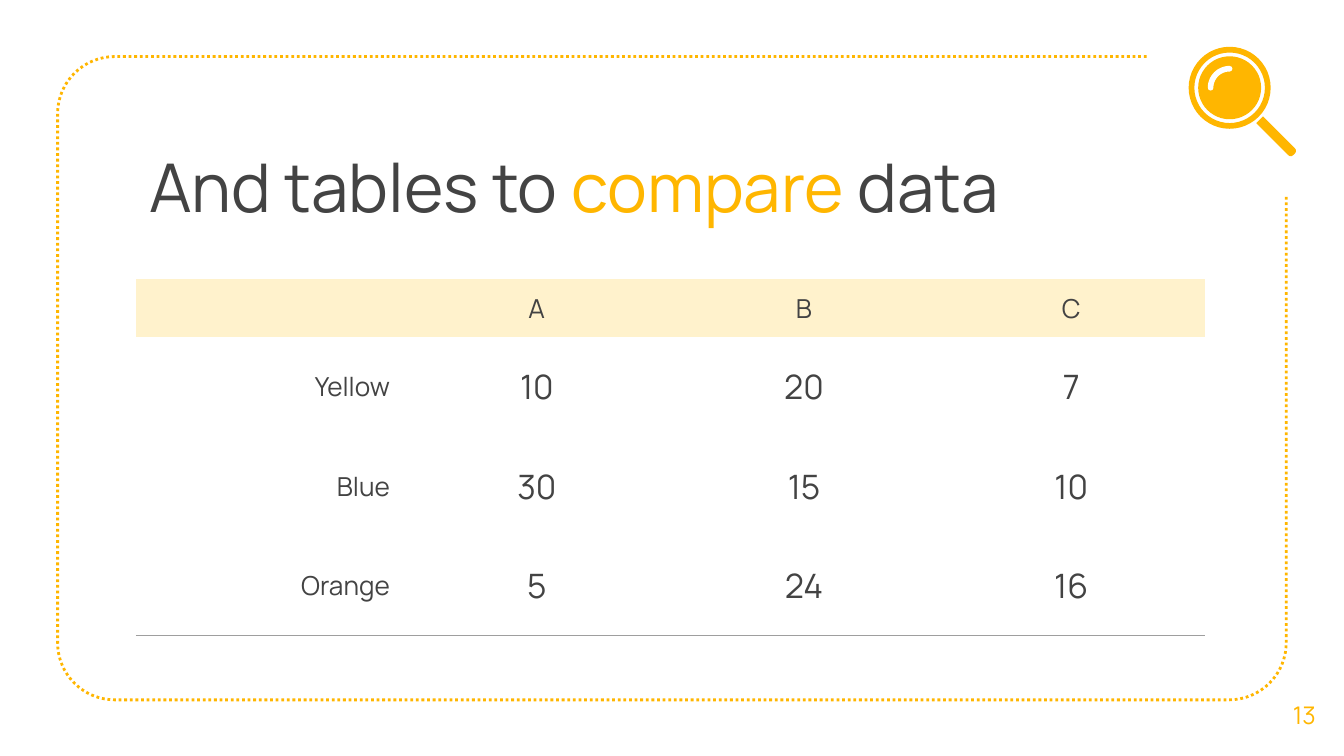
"""Build a slide with a comparison table inside a dotted frame."""
import math

import pptx
import pptx.dml.color
import pptx.enum.dml
import pptx.enum.shapes
import pptx.enum.text
import pptx.oxml
import pptx.oxml.ns
import pptx.util

Cm = pptx.util.Cm
Pt = pptx.util.Pt
RGBColor = pptx.dml.color.RGBColor
Align = pptx.enum.text.PP_ALIGN
Anchor = pptx.enum.text.MSO_ANCHOR
Preset = pptx.enum.shapes.MSO_SHAPE

FONT = "Manrope"
AMBER = RGBColor(0xFF, 0xB6, 0x00)
CREAM = RGBColor(0xFF, 0xF2, 0xCC)
CHARCOAL = RGBColor(0x43, 0x43, 0x43)
GRAY = RGBColor(0x9E, 0x9E, 0x9E)
WHITE = RGBColor(0xFF, 0xFF, 0xFF)

TITLE = [("And tables to ", CHARCOAL), ("compare", AMBER), (" data", CHARCOAL)]
PAGE_NUMBER = "13"
TABLE = [
    ("", "A", "B", "C"),
    ("Yellow", "10", "20", "7"),
    ("Blue", "30", "15", "10"),
    ("Orange", "5", "24", "16"),
]
ROW_RULES = [None, AMBER, AMBER, GRAY]

TABLE_LEFT, TABLE_TOP = 2.57, 5.28
COLUMN_WIDTH, HEADER_HEIGHT, ROW_HEIGHT = 5.05, 1.09, 1.88
FRAME_LEFT, FRAME_TOP, FRAME_RIGHT, FRAME_BOTTOM = 1.09, 1.07, 24.31, 13.23
FRAME_RADIUS = 1.08
FRAME_START_X, FRAME_END_Y = 21.67, 3.71
LENS_X, LENS_Y = 23.24, 1.66


def write(frame, runs, size=14, align=Align.LEFT, anchor=Anchor.MIDDLE):
    frame.word_wrap = True
    frame.auto_size = pptx.enum.text.MSO_AUTO_SIZE.NONE
    frame.vertical_anchor = anchor
    frame.margin_left = frame.margin_right = Cm(0.25)
    frame.margin_top = frame.margin_bottom = Cm(0.25)
    paragraph = frame.paragraphs[0]
    paragraph.alignment = align
    for text, color in runs:
        run = paragraph.add_run()
        run.text = text
        run.font.name = FONT
        run.font.size = Pt(size)
        run.font.color.rgb = color


def arc(x, y, radius, start, end, steps=16):
    angles = [math.radians(start + (end - start) * i / steps) for i in range(steps + 1)]
    return [(x + radius * math.cos(a), y + radius * math.sin(a)) for a in angles]


def draw_line(slide, points, color, width):
    points = [(Cm(x), Cm(y)) for x, y in points]
    builder = slide.shapes.build_freeform(*points[0])
    builder.add_line_segments(points[1:], close=False)
    outline = builder.convert_to_shape()
    outline.shadow.inherit = False
    outline.fill.background()
    outline.line.color.rgb = color
    outline.line.width = Pt(width)
    return outline


def add_frame(slide):
    left, right = FRAME_LEFT + FRAME_RADIUS, FRAME_RIGHT - FRAME_RADIUS
    top, bottom = FRAME_TOP + FRAME_RADIUS, FRAME_BOTTOM - FRAME_RADIUS
    points = [
        (FRAME_START_X, FRAME_TOP),
        *arc(left, top, FRAME_RADIUS, 270, 180),
        *arc(left, bottom, FRAME_RADIUS, 180, 90),
        *arc(right, bottom, FRAME_RADIUS, 90, 0),
        (FRAME_RIGHT, FRAME_END_Y),
    ]
    border = draw_line(slide, points, AMBER, 1.5)
    border.line.dash_style = pptx.enum.dml.MSO_LINE.ROUND_DOT


def add_amber(slide, preset, x, y, width, height):
    part = slide.shapes.add_shape(
        preset, Cm(x - width / 2), Cm(y - height / 2), Cm(width), Cm(height))
    part.shadow.inherit = False
    part.fill.solid()
    part.fill.fore_color.rgb = AMBER
    part.line.fill.background()
    return part


def add_magnifier(slide):
    rim = add_amber(slide, Preset.DONUT, LENS_X, LENS_Y, 1.55, 1.55)
    rim.adjustments[0] = 0.07
    add_amber(slide, Preset.OVAL, LENS_X, LENS_Y, 1.19, 1.19)
    glint = draw_line(slide, arc(LENS_X, LENS_Y, 0.36, 180, 270), WHITE, 3)
    glint.line._get_or_add_ln().set("cap", "rnd")
    handle = add_amber(slide, Preset.ROUND_2_SAME_RECTANGLE, 24.13, 2.59, 0.18, 0.92)
    handle.adjustments[0] = 0.35
    handle.rotation = 135


def set_borders(cell, bottom):
    properties = cell._tc.get_or_add_tcPr()
    for index, side in enumerate(("lnL", "lnR", "lnT", "lnB")):
        color = bottom if side == "lnB" else None
        fill = (f'<a:solidFill><a:srgbClr val="{color}"/></a:solidFill>'
                if color else "<a:noFill/>")
        properties.insert(index, pptx.oxml.parse_xml(
            f'<a:{side} {pptx.oxml.ns.nsdecls("a")} w="{Pt(0.75)}">{fill}</a:{side}>'))


def add_comparison(slide):
    heights = [HEADER_HEIGHT] + [ROW_HEIGHT] * (len(TABLE) - 1)
    columns = len(TABLE[0])
    comparison = slide.shapes.add_table(
        len(TABLE), columns, Cm(TABLE_LEFT), Cm(TABLE_TOP),
        Cm(COLUMN_WIDTH * columns), Cm(sum(heights))).table
    comparison.first_row = comparison.horz_banding = False
    for r, (values, height, rule) in enumerate(zip(TABLE, heights, ROW_RULES)):
        comparison.rows[r].height = Cm(height)
        for c, value in enumerate(values):
            cell = comparison.cell(r, c)
            write(cell.text_frame, [(value, CHARCOAL)], size=18 if r and c else 14,
                  align=Align.CENTER if c else Align.RIGHT)
            cell.vertical_anchor = Anchor.MIDDLE
            cell.margin_left = cell.margin_right = Cm(0.25)
            cell.margin_top = cell.margin_bottom = Cm(0.18)
            if r:
                cell.fill.background()
            else:
                cell.fill.solid()
                cell.fill.fore_color.rgb = CREAM
            set_borders(cell, rule)


def main():
    deck = pptx.Presentation()
    deck.slide_width, deck.slide_height = Cm(25.4), Cm(14.29)
    slide = deck.slides.add_slide(deck.slide_layouts[5])
    add_frame(slide)
    title = slide.shapes.title
    title.left, title.top, title.width, title.height = Cm(2.57), Cm(2.49), Cm(19.08), Cm(2.39)
    write(title.text_frame, TITLE, size=36, anchor=Anchor.TOP)
    add_comparison(slide)
    page = slide.shapes.add_textbox(Cm(23.9), Cm(12.75), Cm(1.5), Cm(1.52))
    write(page.text_frame, [(PAGE_NUMBER, AMBER)], size=13, align=Align.CENTER)
    add_magnifier(slide)
    deck.save("out.pptx")


if __name__ == "__main__":
    main()
